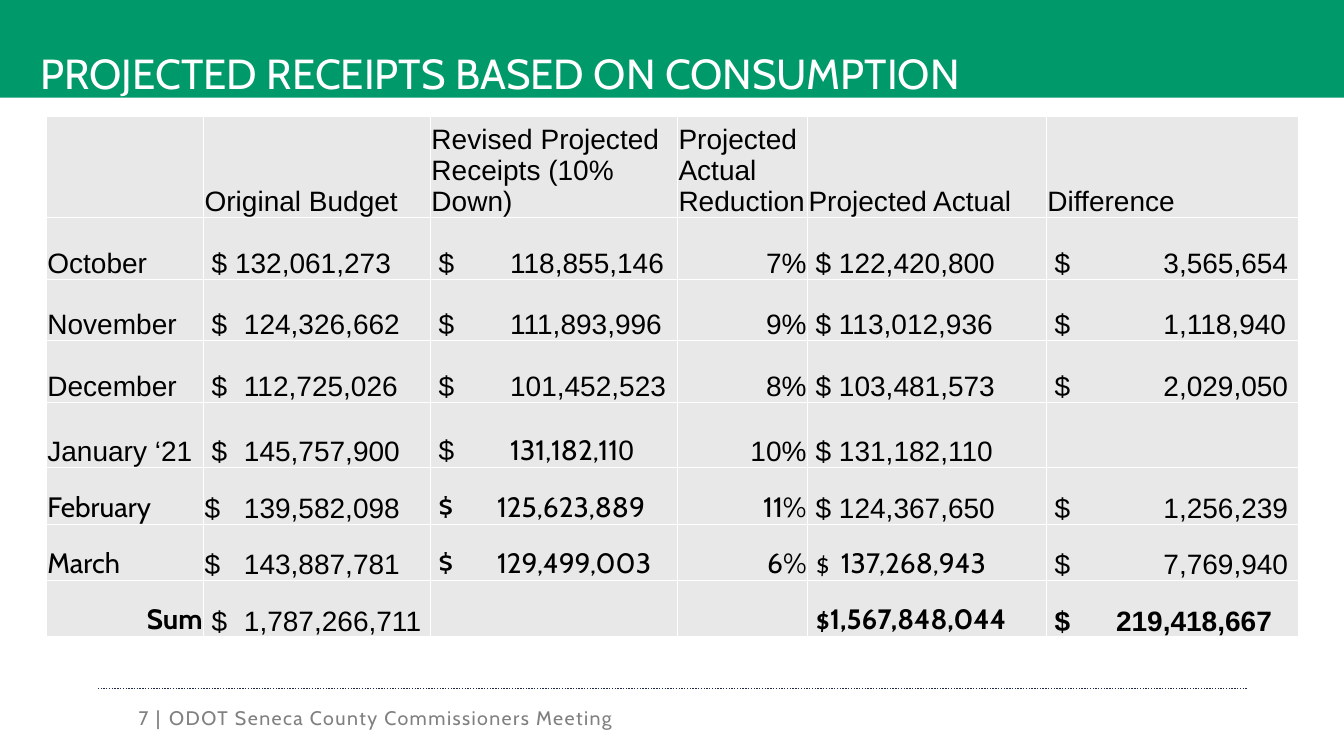
from lxml.etree import SubElement
from pptx import Presentation
from pptx.dml.color import RGBColor
from pptx.enum.dml import MSO_LINE
from pptx.enum.shapes import MSO_CONNECTOR, MSO_SHAPE
from pptx.enum.text import MSO_ANCHOR, PP_ALIGN
from pptx.oxml.ns import qn
from pptx.util import Emu, Inches, Pt

# Content: a cell is a string in Arial or a list of (text, font) runs
TITLE = "PROJECTED RECEIPTS BASED ON CONSUMPTION"
FOOTER = "ODOT Seneca County Commissioners Meeting"
PAGE = "7 |"
ARIAL, CABIN, CALIBRI = "Arial", "Cabin", "Calibri"
ROWS = [
    ["", "Original Budget", "Revised Projected Receipts (10% Down)",
     "Projected Actual Reduction", "Projected Actual", "Difference"],
    ["October", "$ 132,061,273", "$\t118,855,146", "7%", "$ 122,420,800", "$\t3,565,654"],
    ["November", "$\t124,326,662", "$\t111,893,996", "9%", "$ 113,012,936", "$\t1,118,940"],
    ["December", "$\t112,725,026", "$\t101,452,523", "8%", "$ 103,481,573", "$\t2,029,050"],
    ["January ‘21", "$\t145,757,900",
     [("$\t", ARIAL), ("131,182,11", CABIN), ("0", ARIAL)], "10%", "$ 131,182,110", ""],
    [[("February", CABIN)], "$\t139,582,098", [("$\t125,623,889", CABIN)],
     [("11%", CABIN)], "$ 124,367,650", "$\t1,256,239"],
    [[("March", CABIN)], "$\t143,887,781", [("$\t129,499,003", CABIN)],
     [("6%", CABIN)], [("$\t", CALIBRI), ("137,268,943", CABIN)], "$\t7,769,940"],
    [[("Sum", CABIN)], "$\t1,787,266,711", "", "",
     [("$", CALIBRI), ("1,567,848,044", CABIN)], "$\t219,418,667"],
]
COLORS = {"green": "009969", "cell": "E8E8E9", "white": "FFFFFF",
          "black": "000000", "gray": "808080", "navy": "1F2A44"}

# Grid, in inches
COLUMN_WIDTHS = [1.56, 2.25, 2.45, 1.29, 2.37, 2.5]
ROW_HEIGHTS = [0.97] + [0.61] * 3 + [0.65] + [0.56] * 3
TABLE_LEFT, TABLE_TOP = 0.46, 1.15
SUM_ROW = len(ROWS) - 1
BUDGET, REVISED, REDUCTION, ACTUAL, DIFFERENCE = range(1, 6)
EDGE, MONEY_INDENT = 0.01, 0.08
TAB_STOPS = {BUDGET: 0.32, REVISED: 0.71, ACTUAL: 0.25, DIFFERENCE: 1.08}
# Cells whose amount starts elsewhere: (row, column) -> (indent, tab stop)
MONEY_EXCEPTIONS = {
    (5, BUDGET): (EDGE, 0.39), (6, BUDGET): (EDGE, 0.39),
    (5, REVISED): (MONEY_INDENT, 0.58), (6, REVISED): (MONEY_INDENT, 0.58),
    (SUM_ROW, DIFFERENCE): (MONEY_INDENT, 0.61),
}


def color(name):
    return RGBColor.from_string(COLORS[name])


def add_run(paragraph, text, font, size, color_name, bold=False, spacing=0):
    run = paragraph.add_run()
    run.text = text
    run.font.name, run.font.size, run.font.bold = font, Pt(size), bold
    run.font.color.rgb = color(color_name)
    if spacing:
        run.font._element.set("spc", str(spacing * 100))


def set_margins(frame, left, top, right, bottom):
    frame.margin_left, frame.margin_top = Inches(left), Inches(top)
    frame.margin_right, frame.margin_bottom = Inches(right), Inches(bottom)


def add_footer_text(slide, text, left, width, margin, alignment):
    box = slide.shapes.add_textbox(Inches(left), Inches(6.92), Inches(width), Inches(0.4))
    frame = box.text_frame
    frame.word_wrap = alignment == PP_ALIGN.LEFT
    frame.vertical_anchor = MSO_ANCHOR.MIDDLE
    set_margins(frame, margin, 0, margin, 0)
    frame.paragraphs[0].alignment = alignment
    add_run(frame.paragraphs[0], text, CABIN, 14, "gray", spacing=1)


def style_cell(cell):
    properties = cell._tc.get_or_add_tcPr()
    for side in ("lnL", "lnR", "lnT", "lnB"):
        border = SubElement(properties, qn(f"a:{side}"), w=str(Pt(1)))
        SubElement(SubElement(border, qn("a:solidFill")), qn("a:srgbClr"), val=COLORS["white"])
    cell.fill.solid()
    cell.fill.fore_color.rgb = color("cell")
    cell.vertical_anchor = MSO_ANCHOR.BOTTOM


def fill_cell(cell, content, row, column):
    runs = content if isinstance(content, list) else [(content, ARIAL)]
    paragraph = cell.text_frame.paragraphs[0]
    indent = EDGE
    if runs[0][0].startswith("$"):
        indent, stop = MONEY_EXCEPTIONS.get((row, column), (MONEY_INDENT, TAB_STOPS[column]))
        if any("\t" in text for text, font in runs):
            tabs = SubElement(paragraph._p.get_or_add_pPr(), qn("a:tabLst"))
            SubElement(tabs, qn("a:tab"), pos=str(Inches(stop)), algn="l")
    set_margins(cell, indent, EDGE, EDGE, 0)
    if row and (column == REDUCTION or (row, column) == (SUM_ROW, 0)):
        paragraph.alignment = PP_ALIGN.RIGHT
    bold = row == SUM_ROW and column != BUDGET
    for text, font in runs:
        if text:
            add_run(paragraph, text, font, 20, "black", bold)


presentation = Presentation()
presentation.slide_width, presentation.slide_height = Inches(13.33), Inches(7.5)
slide = presentation.slides.add_slide(presentation.slide_layouts[6])

# Footer with its dotted rule
add_footer_text(slide, PAGE, 1.07, 0.52, 0, PP_ALIGN.RIGHT)
rule = slide.shapes.add_connector(
    MSO_CONNECTOR.STRAIGHT, Inches(0.97), Inches(6.83), Inches(12.37), Inches(6.83))
rule.line.color.rgb = color("navy")
rule.line.width = Pt(1)
rule.line.dash_style = MSO_LINE.ROUND_DOT
SubElement(rule._element.spPr, qn("a:effectLst"))
add_footer_text(slide, FOOTER, 1.58, 8.08, 0.1, PP_ALIGN.LEFT)

# Title band
band = slide.shapes.add_shape(
    MSO_SHAPE.RECTANGLE, 0, Inches(-0.03), presentation.slide_width, Inches(1))
band.shadow.inherit = False
band.fill.solid()
band.fill.fore_color.rgb = color("green")
band.line.fill.background()
band.text_frame.word_wrap = True
band.text_frame.vertical_anchor = MSO_ANCHOR.BOTTOM
set_margins(band.text_frame, 0.4, 0.1, 0.4, 0)
band.text_frame.paragraphs[0].alignment = PP_ALIGN.LEFT
add_run(band.text_frame.paragraphs[0], TITLE, CABIN, 30, "white")

# Receipts table
table = slide.shapes.add_table(
    len(ROWS), len(COLUMN_WIDTHS), Inches(TABLE_LEFT), Inches(TABLE_TOP),
    Inches(sum(COLUMN_WIDTHS)), Inches(sum(ROW_HEIGHTS))).table
table.first_row = table.horz_banding = False
for column, width in zip(table.columns, COLUMN_WIDTHS):
    column.width = Emu(Inches(width))
for row, height in zip(table.rows, ROW_HEIGHTS):
    row.height = Emu(Inches(height))
for row_index, contents in enumerate(ROWS):
    for column_index, content in enumerate(contents):
        cell = table.cell(row_index, column_index)
        style_cell(cell)
        fill_cell(cell, content, row_index, column_index)

presentation.save("out.pptx")
